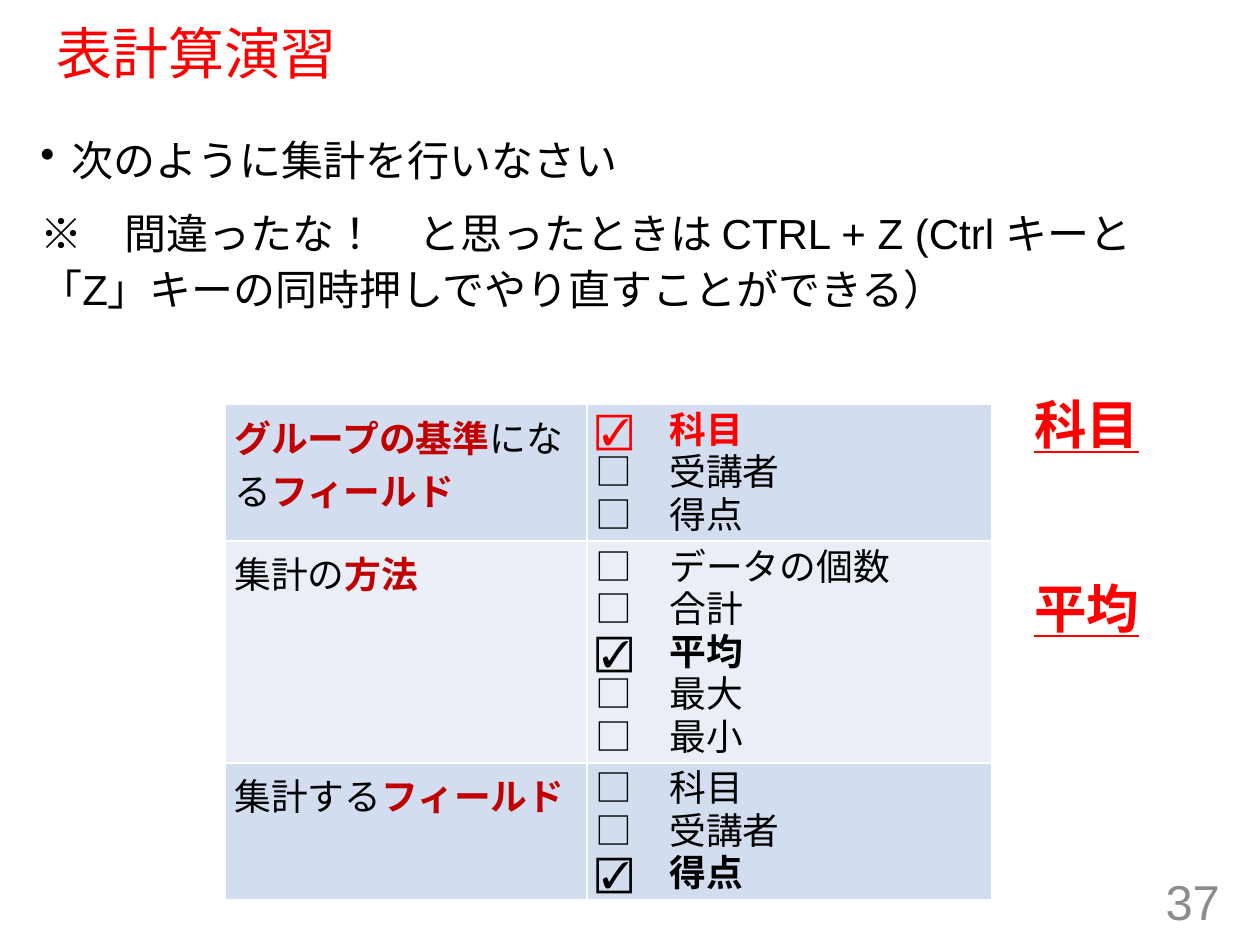
from dataclasses import dataclass

import pptx
import pptx.dml.color
import pptx.enum.lang
import pptx.enum.text
import pptx.oxml.ns
import pptx.util
from lxml import etree

RGB = pptx.dml.color.RGBColor
ALIGN = pptx.enum.text.PP_ALIGN
ANCHOR = pptx.enum.text.MSO_ANCHOR
Inches = pptx.util.Inches
Pt = pptx.util.Pt

RED = RGB(0xFF, 0x00, 0x00)
DARK = RGB(0xC0, 0x00, 0x00)
BLACK = RGB(0x00, 0x00, 0x00)
GRAY = RGB(0x8C, 0x8C, 0x8C)
BANDS = (RGB(0xD2, 0xDE, 0xEF), RGB(0xEA, 0xEF, 0xF7))

FONT = "Arial"
LANG = pptx.enum.lang.MSO_LANGUAGE_ID.JAPANESE
COLS, ROWS = 100, 75
WIDE, HIGH = Inches(10), Inches(7.5)
PAD = (0.07, 0.04)


@dataclass
class Run:
    text: str
    color: RGB = BLACK
    bold: bool = False
    line: bool = False


@dataclass
class Area:
    """Left, top, width and height in columns and rows of the slide grid."""
    left: float
    top: float
    wide: float
    high: float

    def box(self) -> tuple:
        return across(self.left), down(self.top), across(self.wide), down(self.high)


@dataclass
class Group:
    """One table row: its label, its options and the option that is ticked."""
    label: list
    items: list
    pick: str
    high: float
    color: RGB = BLACK


def across(cols: float) -> int:
    return int(WIDE * cols / COLS)


def down(rows: float) -> int:
    return int(HIGH * rows / ROWS)


def write(para, runs: list, size: float) -> None:
    for run in runs:
        part = para.add_run()
        part.text = run.text
        font = part.font
        font.name, font.size, font.bold = FONT, Pt(size), run.bold
        font.underline, font.language_id = run.line, LANG
        font.color.rgb = run.color


def add_text(slide, area: Area, wrap: bool = True):
    frame = slide.shapes.add_textbox(*area.box()).text_frame
    frame.word_wrap = wrap
    return frame


def pad(item) -> None:
    """Set the narrow margins shared by the body and the cells."""
    side, edge = map(Inches, PAD)
    item.margin_left = item.margin_right = side
    item.margin_top = item.margin_bottom = edge


def add_bullet(para, indent: float) -> None:
    props = para._p.get_or_add_pPr()
    props.set("marL", str(Inches(indent)))
    props.set("indent", str(-Inches(indent)))
    mark = etree.SubElement(props, pptx.oxml.ns.qn("a:buChar"))
    mark.set("char", "•")


def style(cell, fill: RGB) -> None:
    """Give a cell white borders, a fill and narrow margins."""
    qn = pptx.oxml.ns.qn
    props = cell._tc.get_or_add_tcPr()
    for side in ("a:lnL", "a:lnR", "a:lnT", "a:lnB"):
        edge = etree.SubElement(props, qn(side), w=str(Pt(1)))
        solid = etree.SubElement(edge, qn("a:solidFill"))
        etree.SubElement(solid, qn("a:srgbClr"), val="FFFFFF")
    cell.fill.solid()
    cell.fill.fore_color.rgb = fill
    pad(cell)


def add_title(slide, area: Area, text: str) -> None:
    title = slide.shapes.title
    title.left, title.top, title.width, title.height = area.box()
    frame = title.text_frame
    frame.auto_size = pptx.enum.text.MSO_AUTO_SIZE.NONE
    frame.vertical_anchor = ANCHOR.MIDDLE
    para = frame.paragraphs[0]
    para.alignment, para.line_spacing = ALIGN.LEFT, 0.9
    write(para, [Run(text, RED)], 32)


def add_body(slide, area: Area, task: str, note: str) -> None:
    frame = add_text(slide, area)
    pad(frame)
    first, second = frame.paragraphs[0], frame.add_paragraph()
    add_bullet(first, 0.25)
    second.space_before = Pt(10)
    for para, text in ((first, task), (second, note)):
        para.line_spacing = 1.1
        write(para, [Run(text)], 24)


def add_groups(slide, left: float, top: float, widths: tuple, groups: list) -> None:
    area = Area(left, top, sum(widths), sum(group.high for group in groups))
    table = slide.shapes.add_table(len(groups), len(widths), *area.box()).table
    for col, wide in zip(table.columns, widths):
        col.width = across(wide)
    for num, group in enumerate(groups):
        table.rows[num].height = down(group.high)
        name, picks = table.cell(num, 0), table.cell(num, 1)
        for cell in (name, picks):
            style(cell, BANDS[num % 2])
        write(name.text_frame.paragraphs[0], group.label, 21)
        frame = picks.text_frame
        for pos, item in enumerate(group.items):
            para = frame.add_paragraph() if pos else frame.paragraphs[0]
            para.line_spacing = 0.8
            on = item == group.pick
            mark = "☑" if on else "□"
            write(para, [Run(f"{mark}　{item}", group.color if on else BLACK, on)], 21)


FIELDS = ["科目", "受講者", "得点"]
GROUPS = [
    Group([Run("グループの基準", DARK, True), Run("になる"), Run("フィールド", DARK, True)],
          FIELDS, "科目", 10.85, RED),
    Group([Run("集計の"), Run("方法", DARK, True)],
          ["データの個数", "合計", "平均", "最大", "最小"], "平均", 17.6),
    Group([Run("集計する"), Run("フィールド", DARK, True)], FIELDS, "得点", 10.85),
]
ANSWERS = (("科目", 30.6), ("平均", 45.2))


def main() -> None:
    deck = pptx.Presentation()
    deck.slide_width, deck.slide_height = WIDE, HIGH
    slide = deck.slides.add_slide(deck.slide_layouts[5])

    add_title(slide, Area(3.5, 1.9, 92.5, 5.1), "表計算演習")

    frame = add_text(slide, Area(75.3, 69.5, 22.5, 4))
    frame.vertical_anchor = ANCHOR.MIDDLE
    frame.paragraphs[0].alignment = ALIGN.RIGHT
    write(frame.paragraphs[0], [Run("37", GRAY)], 28)

    add_body(slide, Area(2.5, 9.9, 95, 19.4), "次のように集計を行いなさい",
             "※　間違ったな！　と思ったときは CTRL + Z (Ctrl キーと"
             "「Z」キーの同時押しでやり直すことができる）")
    add_groups(slide, 17.9, 32.1, (28.7, 32.1), GROUPS)

    for text, top in ANSWERS:
        frame = add_text(slide, Area(81.1, top, 10.4, 6.1), wrap=False)
        write(frame.paragraphs[0], [Run(text, RED, True, True)], 30)

    deck.save("out.pptx")


if __name__ == "__main__":
    main()
